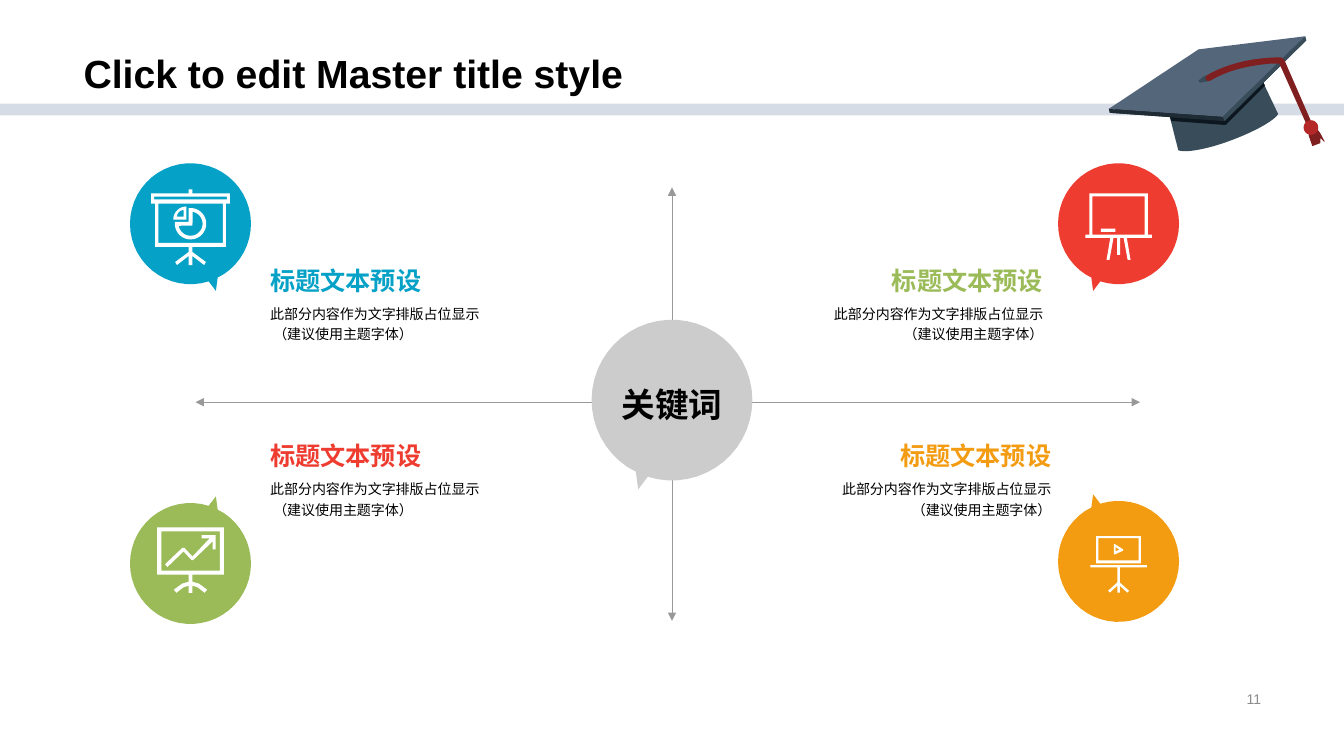
from math import cos, radians, sin

from lxml.etree import SubElement
from pptx import Presentation
from pptx.dml.color import RGBColor
from pptx.enum.shapes import MSO_CONNECTOR, MSO_SHAPE
from pptx.enum.text import MSO_ANCHOR as Anchor, PP_ALIGN as Align
from pptx.oxml.ns import qn
from pptx.util import Pt

THEME = {
    "font": "Arial",
    "black": "000000", "white": "FFFFFF", "number": "8C8C8C",
    "bar": "D6DCE5", "axis": "999999", "hub": "CCCCCC",
    "blue": "06A1C6", "red": "EE3C30", "green": "9BBB59", "orange": "F39C12",
    "cap_top": "54667A", "cap_side": "384C59", "cap_edge": "1F2B35",
    "cap_shade": "0C171F", "cord": "7F1F1F", "knot": "B52828",
    "title_size": 28, "hub_size": 24, "heading_size": 18, "body_size": 10, "number_size": 10,
}
TITLE = "Click to edit Master title style"
PAGE_NUMBER = "11"
KEYWORD = "关键词"
HEADING = "标题文本预设"
BODY = ("此部分内容作为文字排版占位显示", " （建议使用主题字体）")

HUB = (480, 285.8, 57.4)
BUBBLE_RADIUS = 43.2
AXES = [((139.7, 287.3), (814.3, 287.3)), ((480, 133.9), (480, 443.5))]
BODY_GAP = 26.6


def mirror(half):
    return half + [(-x, y) for x, y in reversed(half)]


def box(half_width, top, bottom):
    return mirror([(half_width, top), (half_width, bottom)])


def arc(x, y, radius, start, end, steps=48):
    angles = [radians(start + (end - start) * i / steps) for i in range(steps + 1)]
    return [(x + radius * cos(a), y + radius * sin(a)) for a in angles]


def curve(*controls, steps=12):
    points = []
    for i in range(steps + 1):
        t = i / steps
        weights = ((1 - t) ** 3, 3 * t * (1 - t) ** 2, 3 * t * t * (1 - t), t ** 3)
        points.append(tuple(sum(w * c[k] for w, c in zip(weights, controls)) for k in (0, 1)))
    return points


CHART_SCREEN = [
    mirror([(1.3, -24.5), (1.3, -21.6), (28.1, -21.6), (28.1, -14.4), (25.2, -14.4),
            (25.2, 16.6), (1.3, 16.6), (1.3, 20.2), (11, 27.4), (9.7, 29.5), (1.3, 23), (1.3, 29.5)]),
    box(26, -19.4, -17.3),
    box(23, -14.4, 13.7),
    arc(0, 0, 11.2, -97, 187) + [(-1.3, -1.3)],
    arc(0, 0, 8.6, -80, 170) + [(1.4, 1.4)],
    arc(-2.9, -2.9, 9.4, 180, 270) + [(-2.9, -2.9)],
    arc(-5, -5, 4.7, 180, 270) + [(-5, -5)],
]
BLACKBOARD = [
    mirror([(20.9, -21.6), (20.9, 7.9), (23.8, 7.9), (23.8, 10.1), (5.9, 10.1), (8.6, 25.9),
            (6.5, 25.9), (3.6, 10.1), (1.1, 10.1), (1.1, 22.3)]),
    box(18.7, -19.4, 7.9),
    [(-12.6, 3.6), (-2.2, 3.6), (-2.2, 5.8), (-12.6, 5.8)],
]
TREND_BOARD = [
    mirror([(23.8, -25.9), (23.8, 7.9), (1.3, 7.9), (1.3, 13), (6, 14.4), (11.9, 18.7),
            (10.1, 20.9), (5, 17), (1.3, 15.8), (1.3, 20.9)]),
    box(20.9, -23, 5),
    [(8, -20.2), (18, -20.2), (18, -10), (15.8, -10), (15.8, -15.8), (1.8, -2.4), (0.8, -2.4),
     (-5, -8.6), (-16.5, 2.5), (-18.2, 0.5), (-5.8, -11.2), (-4.4, -11.2), (1.4, -5), (13.7, -18), (8, -18)],
]
VIDEO_STAND = [
    mirror([(20.2, 2.7), (20.2, 4.4), (0.9, 4.4), (0.9, 15.1), (7.5, 21), (6.2, 22.3),
            (0.9, 17.4), (0.9, 22.3)]),
    box(16, -18, 1.4),
    box(14.4, -16.5, -0.6),
    [(-3.4, -12.2), (-2.5, -12.2), (3.2, -8.6), (3.2, -7.6), (-2.5, -5), (-3.4, -5)],
    [(-2, -10.1), (-2, -7.2), (0.7, -8.4)],
]

QUADRANTS = [
    ((136.1, 159.8), (1, 1), "blue", CHART_SCREEN, (193, 189.4), "blue"),
    ((799, 159.8), (-1, 1), "red", BLACKBOARD, (537.1, 189.4), "green"),
    ((136.1, 402.5), (1, -1), "green", TREND_BOARD, (193, 314.6), "red"),
    ((799, 401), (-1, -1), "orange", VIDEO_STAND, (542.9, 314.6), "orange"),
]

CAP = [
    ("cord", [(946.1, 101.5), (945.9, 100.5), (943, 95), (939.6, 90.7), (936.5, 90.2), (935.3, 92.2),
              (934.8, 97), (937.4, 104.4), (943.2, 102.2), (943.2, 98.6)]),
    ("cap_side", [(894.2, 41.8), (830.9, 64.8)]
     + curve((841.7, 107.3), (846.7, 109.4), (862.6, 106.6), (879.8, 100.1))
     + curve((879.8, 100.1), (897.1, 93.6), (910.8, 85.7), (913, 81.4))),
    ("cap_shade", [(894.2, 41.8), (830.9, 65.5), (836.6, 86.4), (875.5, 89.3), (903.6, 61.2)]),
    ("cap_edge", [(874.8, 86.4), (792.7, 80.6), (856.8, 38.2), (933.1, 28.8)]),
    ("cap_top", [(873.4, 83.5), (792, 77.8), (856.1, 35.3), (932.4, 25.9)]),
    ("cap_edge", [(792, 77.8), (792.7, 80.6), (874.8, 86.4), (873.4, 83.5)]),
    ("cap_side", [(932.4, 25.9), (933.1, 28.8), (874.8, 86.4), (873.4, 83.5)]),
    ("cap_side", [(869.8, 53.3), (867, 56), (862, 58.2), (857, 59), (856, 57.5), (860, 54.5), (866, 52.8)]),
    ("cord", curve((864.7, 57.6), (877.7, 49.7), (892.8, 46.8), (907.9, 45.4))
     + [(913.7, 45.4), (915.8, 49.7), (933.8, 90), (936, 91.6), (937.6, 90), (937.4, 88.6), (917.3, 42.5)]
     + curve((915.1, 41), (897.1, 41), (877.7, 44.6), (861.8, 54)) + [(861, 56), (862.5, 58)]),
    ("knot", arc(936.4, 91.1, 5.2, 0, 360)),
]


def color(name):
    return RGBColor.from_string(THEME[name])


def paint(shape, fill):
    shape.shadow.inherit = False
    shape.fill.solid()
    shape.fill.fore_color.rgb = color(fill)
    shape.line.fill.background()


def add_outline(shapes, contours, fill, origin=(0, 0)):
    placed = [[(Pt(x + origin[0]), Pt(y + origin[1])) for x, y in contour] for contour in contours]
    builder = shapes.build_freeform(*placed[0][0])
    for index, contour in enumerate(placed):
        if index:
            builder.move_to(*contour[0])
        builder.add_line_segments(contour[1:], close=True)
    paint(builder.convert_to_shape(), fill)


def add_bubble(shapes, center, radius, flip, fill):
    unit = arc(0, 0, 1, 72.5, 416.5) + [(0.45, 0.89), (0.42, 1.11)]
    contour = [(x * radius * flip[0], y * radius * flip[1]) for x, y in unit]
    add_outline(shapes, [contour], fill, center)


def add_text(shapes, frame, lines, size, ink, bold=False, align=Align.LEFT,
             anchor=Anchor.TOP, inset=True, wrap=True, spacing=1.0):
    text_frame = shapes.add_textbox(*map(Pt, frame)).text_frame
    text_frame.word_wrap = wrap
    text_frame.vertical_anchor = anchor
    if not inset:
        text_frame.margin_left = text_frame.margin_right = 0
        text_frame.margin_top = text_frame.margin_bottom = 0
    paragraph = text_frame.paragraphs[0]
    paragraph.alignment = align
    paragraph.line_spacing = spacing
    for index, line in enumerate(lines):
        if index:
            paragraph.add_line_break()
        run = paragraph.add_run()
        run.text = line
        run.font.name = THEME["font"]
        run.font.size = Pt(THEME[size])
        run.font.bold = bold
        run.font.color.rgb = color(ink)


def add_axis(shapes, start, end):
    axis = shapes.add_connector(MSO_CONNECTOR.STRAIGHT, *map(Pt, start + end))
    axis.line.color.rgb = color("axis")
    axis.line.width = Pt(0.25)
    for tag in ("a:headEnd", "a:tailEnd"):
        SubElement(axis.line._get_or_add_ln(), qn(tag), type="triangle")
    SubElement(axis._element.spPr, qn("a:effectLst"))


def main():
    presentation = Presentation()
    presentation.slide_width, presentation.slide_height = Pt(960), Pt(540)
    shapes = presentation.slides.add_slide(presentation.slide_layouts[6]).shapes

    paint(shapes.add_shape(MSO_SHAPE.RECTANGLE, 0, Pt(74), Pt(960), Pt(8.4)), "bar")
    cap = shapes.add_group_shape()
    for fill, contour in CAP:
        add_outline(cap.shapes, [contour], fill)
    add_text(shapes, (52.6, 0, 740, 72.7), [TITLE], "title_size", "black", True,
             anchor=Anchor.BOTTOM, spacing=0.9)
    add_text(shapes, (680.4, 491, 227.5, 16.6), [PAGE_NUMBER], "number_size", "number",
             align=Align.RIGHT, anchor=Anchor.MIDDLE)

    for start, end in AXES:
        add_axis(shapes, start, end)
    add_bubble(shapes, HUB[:2], HUB[2], (-1, 1), "hub")
    add_text(shapes, (444, 252.7, 72, 72), [KEYWORD], "hub_size", "black", True,
             Align.CENTER, Anchor.MIDDLE, inset=False, wrap=False)

    for center, flip, fill, icon, (left, top), ink in QUADRANTS:
        add_bubble(shapes, center, BUBBLE_RADIUS, flip, fill)
        add_outline(shapes, icon, "white", center)
        align = Align.LEFT if flip[0] > 0 else Align.RIGHT
        add_text(shapes, (left, top + BODY_GAP, 208, 44), BODY, "body_size", "black",
                 align=align, inset=False, spacing=1.2)
        add_text(shapes, (left, top, 208, 32.4), [HEADING], "heading_size", ink, True,
                 align, inset=False)
    presentation.save("out.pptx")


if __name__ == "__main__":
    main()
